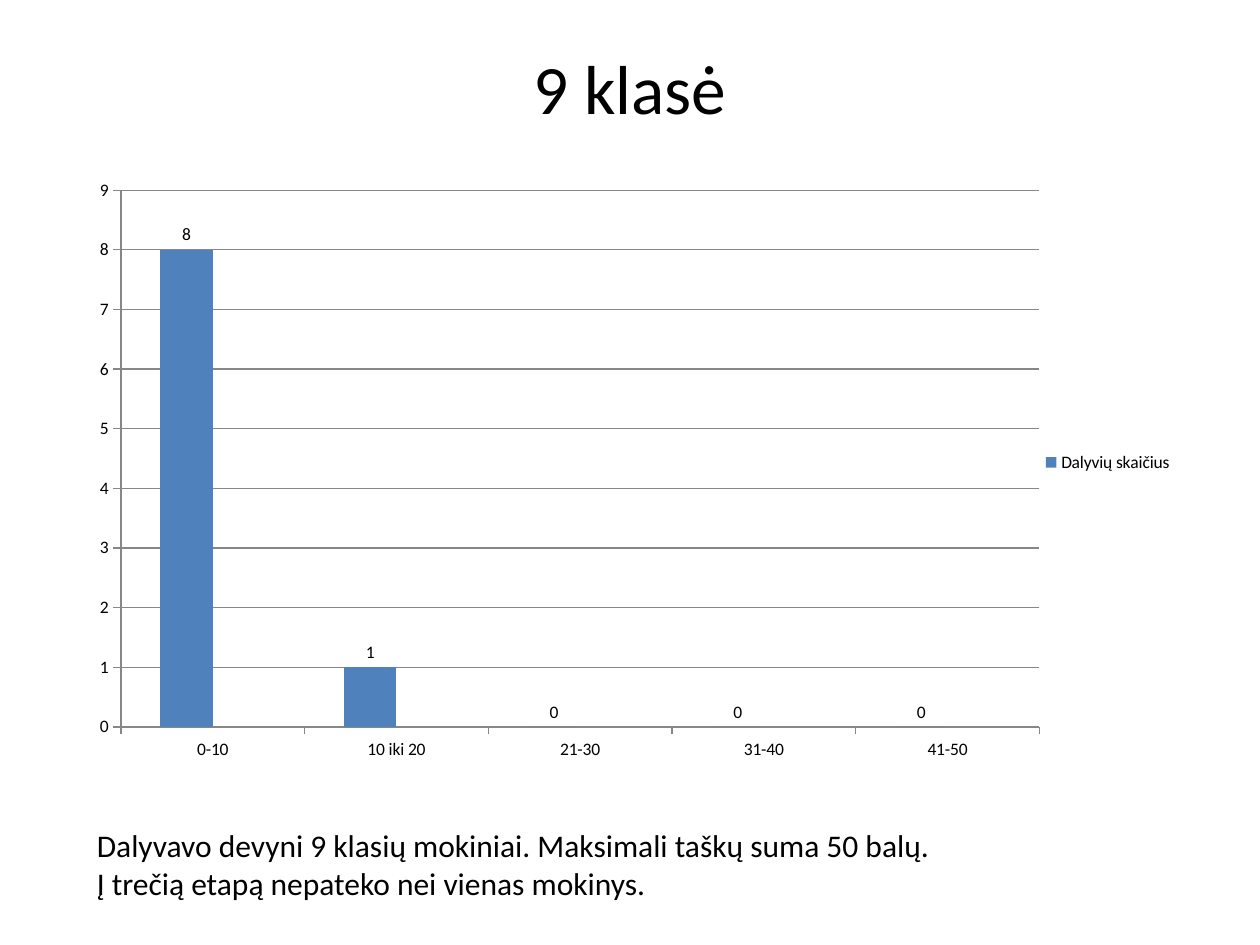
from lxml.etree import SubElement
from pptx import Presentation
from pptx.chart.data import CategoryChartData
from pptx.dml.color import RGBColor
from pptx.enum.chart import XL_CHART_TYPE as ChartType, XL_LABEL_POSITION as LabelPos
from pptx.enum.chart import XL_LEGEND_POSITION as LegendPos, XL_TICK_MARK as Tick
from pptx.enum.text import MSO_ANCHOR as Anchor, PP_ALIGN as Align
from pptx.oxml import parse_xml
from pptx.oxml.ns import nsdecls, qn
from pptx.util import Inches, Pt

TITLE = "9 klasė"
NOTES = [
    "Dalyvavo devyni 9 klasių mokiniai. Maksimali taškų suma 50 balų.",
    "Į trečią etapą nepateko nei vienas mokinys.",
]
CATEGORIES = ["0-10", "10 iki 20", "21-30", "31-40", "41-50"]
SERIES = [
    ("Dalyvių skaičius", [8, 1, 0, 0, 0], "4F81BD"),
    ("Series 2", [None] * len(CATEGORIES), "C0504D"),
    ("Stulpelis2", [], "9BBB59"),
]
CHART_W, CHART_H = 8.91, 4.72
PLOT = {
    "x": 0.46 / CHART_W, "y": 0.2 / CHART_H,
    "w": 7.29 / CHART_W, "h": 4.26 / CHART_H,
}
FONT, BLACK, GREY = "Calibri", "000000", "878787"


def rgb(color):
    return RGBColor.from_string(color)


def set_font(font, size, color=BLACK):
    font.name, font.size = FONT, Pt(size)
    font.color.rgb = rgb(color)


def write(tf, lines, size, align=Align.LEFT, anchor=Anchor.TOP, wrap=True):
    tf.word_wrap, tf.vertical_anchor = wrap, anchor
    for i, line in enumerate(lines):
        p = tf.paragraphs[0] if i == 0 else tf.add_paragraph()
        p.alignment = align
        r = p.add_run()
        r.text = line
        set_font(r.font, size)


def place_plot(chart):
    area = chart.element.find(".//" + qn("c:plotArea"))
    for old in area.findall(qn("c:layout")):
        area.remove(old)
    layout = parse_xml(f"<c:layout {nsdecls('c')}/>")
    manual = SubElement(layout, qn("c:manualLayout"))
    values = {"layoutTarget": "inner", "xMode": "edge", "yMode": "edge", **PLOT}
    for tag, val in values.items():
        SubElement(manual, qn("c:" + tag), val=str(val))
    area.insert(0, layout)


def hide_legend_entry(chart, index):
    entry = parse_xml(
        f'<c:legendEntry {nsdecls("c")}><c:idx val="{index}"/>'
        '<c:delete val="1"/></c:legendEntry>'
    )
    chart.element.find(".//" + qn("c:legendPos")).addnext(entry)


def add_participants_chart(s):
    data = CategoryChartData()
    data.categories = CATEGORIES
    for name, vals, _ in SERIES:
        data.add_series(name, vals)
    chart = s.shapes.add_chart(
        ChartType.COLUMN_CLUSTERED,
        Inches(0.5), Inches(1.31), Inches(CHART_W), Inches(CHART_H), data,
    ).chart
    set_font(chart.font, 10)
    chart.has_title = False
    chart.has_legend = True
    chart.legend.position = LegendPos.RIGHT
    chart.legend.include_in_layout = False
    hide_legend_entry(chart, 1)
    place_plot(chart)

    plot = chart.plots[0]
    plot.gap_width, plot.overlap, plot.vary_by_categories = 150, 0, False
    for series, (_, _, color) in zip(plot.series, SERIES):
        series.format.fill.solid()
        series.format.fill.fore_color.rgb = rgb(color)
    labels = plot.series[0].data_labels
    labels.show_value, labels.position = True, LabelPos.OUTSIDE_END
    set_font(labels.font, 10)

    value_axis = chart.value_axis
    value_axis.minimum_scale, value_axis.maximum_scale, value_axis.major_unit = 0, 9, 1
    value_axis.has_major_gridlines = True
    for axis in (chart.category_axis, value_axis):
        axis.major_tick_mark = Tick.OUTSIDE
    for part in (chart.category_axis, value_axis, value_axis.major_gridlines):
        part.format.line.color.rgb = rgb(GREY)
        part.format.line.width = Pt(0.75)


def main():
    """Build the slide with the grade 9 results chart."""
    prs = Presentation()
    prs.slide_width, prs.slide_height = Inches(10), Inches(7.5)
    s = prs.slides.add_slide(prs.slide_layouts[5])
    title = s.shapes.title
    title.left, title.top = Inches(0.5), Inches(0.3)
    title.width, title.height = Inches(9), Inches(0.77)
    write(title.text_frame, [TITLE], 39.6, Align.CENTER, Anchor.MIDDLE)
    add_participants_chart(s)
    box = s.shapes.add_textbox(Inches(0.67), Inches(6.51), Inches(6.88), Inches(1.01))
    write(box.text_frame, NOTES, 18, wrap=False)
    prs.save("out.pptx")


if __name__ == "__main__":
    main()
